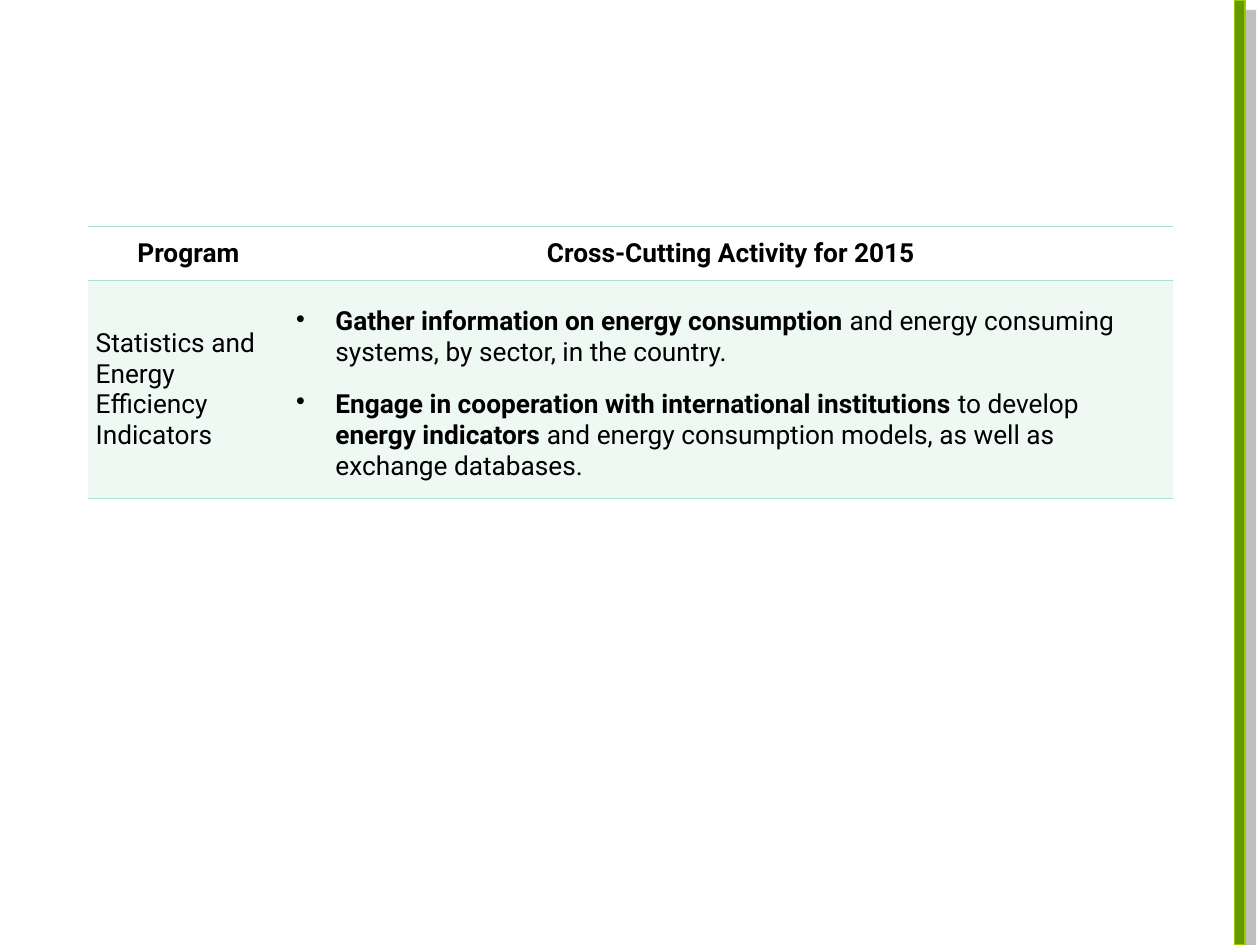
import pptx
import pptx.util
import pptx.dml.color
import pptx.enum.shapes
import pptx.enum.text
import pptx.oxml
import pptx.oxml.ns

Pt = pptx.util.Pt
ALIGN = pptx.enum.text.PP_ALIGN
COLORS = {"text": "000000", "mint": "AAE2CA", "green": "669900",
          "lime": "99CC00", "shade": "808080"}
NO_STYLE = "{2D5ABB26-0587-4C30-8999-92F81FD0307C}"


def color(name):
    return pptx.dml.color.RGBColor.from_string(COLORS[name])


def node(xml):
    """Parse one element whose root tag is in the drawing namespace."""
    tag, rest = xml[1:].split(":", 1)
    return pptx.oxml.parse_xml(f"<{tag}:{rest}".replace(
        ">", f" {pptx.oxml.ns.nsdecls('a')}>", 1))


class Deck:
    font = "Roboto"
    size = 15
    gap = 12
    indent = 22.5

    def __init__(self, wide, high):
        self.show = pptx.Presentation()
        self.show.slide_width, self.show.slide_height = Pt(wide), Pt(high)
        self.slide = self.show.slides.add_slide(self.show.slide_layouts[6])

    def bar(self, left, top, wide, high):
        shape = self.slide.shapes.add_shape(
            pptx.enum.shapes.MSO_SHAPE.RECTANGLE,
            Pt(left), Pt(top), Pt(wide), Pt(high))
        shape.fill.solid()
        shape.fill.fore_color.rgb = color("green")
        shape.line.color.rgb = color("lime")
        shape.line.width = Pt(0.75)
        shape.shadow.inherit = False
        shade = node(
            f'<a:outerShdw dist="{Pt(8.5)}" dir="2700000" algn="ctr" rotWithShape="0">'
            f'<a:srgbClr val="{COLORS["shade"]}"><a:alpha val="50000"/>'
            '</a:srgbClr></a:outerShdw>')
        shape._element.spPr.find(pptx.oxml.ns.qn("a:effectLst")).append(shade)

    def table(self, left, top, cols, rows):
        frame = self.slide.shapes.add_table(
            len(rows), len(cols), Pt(left), Pt(top), Pt(sum(cols)), Pt(sum(rows)))
        grid = frame.table
        grid.first_row = grid.horz_banding = False
        style = grid._tbl.tblPr.find(pptx.oxml.ns.qn("a:tableStyleId"))
        style.text = NO_STYLE
        for col, wide in zip(grid.columns, cols):
            col.width = Pt(wide)
        for row, high in zip(grid.rows, rows):
            row.height = Pt(high)
        return grid

    def cell(self, cell, paras, align=ALIGN.LEFT, tint=False, bullet=False, top=2.2):
        """Fill a cell; each paragraph is a list of (text, bold) runs."""
        cell.vertical_anchor = pptx.enum.text.MSO_ANCHOR.MIDDLE
        cell.margin_left = cell.margin_right = Pt(4.3)
        cell.margin_top, cell.margin_bottom = Pt(top), Pt(2.2)
        self.edges(cell, "B" if tint else "TB")
        if tint:
            cell.fill.solid()
            cell.fill.fore_color.rgb = color("mint")
            tone = cell._tc.tcPr.find(".//" + pptx.oxml.ns.qn("a:solidFill") + "[last()]")
            tone = cell._tc.tcPr[-1] if tone is not None else tone
            tone[0].append(node('<a:alpha val="20000"></a:alpha>'))
        else:
            cell.fill.background()
        for num, runs in enumerate(paras):
            frame = cell.text_frame
            para = frame.add_paragraph() if num else frame.paragraphs[0]
            self.para(para, runs, align, bullet)
            if num:
                para.space_before = Pt(self.gap)

    def edges(self, cell, sides):
        for side in sides:
            cell._tc.get_or_add_tcPr().append(node(
                f'<a:ln{side} w="{Pt(1)}"><a:solidFill>'
                f'<a:srgbClr val="{COLORS["mint"]}"/></a:solidFill></a:ln{side}>'))

    def para(self, para, runs, align, bullet):
        para.alignment = align
        if bullet:
            props = para._p.get_or_add_pPr()
            props.set("marL", str(Pt(self.indent)))
            props.set("indent", str(-Pt(self.indent)))
            props.append(node('<a:buChar char="•"></a:buChar>'))
        para.font.name = self.font
        para.font.size = Pt(self.size)
        para.font.color.rgb = color("text")
        for text, bold in runs:
            run = para.add_run()
            run.text = text
            run.font.bold = bold


def main():
    deck = Deck(720, 540)
    deck.bar(705.6, 0, 5.8, 540)
    grid = deck.table(50.4, 129.4, [114.5, 505.5], [30.9, 124.6])
    for col, text in enumerate(["Program", "Cross-Cutting Activity for 2015"]):
        deck.cell(grid.cell(0, col), [[(text, True)]], ALIGN.CENTER)
    deck.cell(grid.cell(1, 0),
              [[("Statistics and Energy Efficiency Indicators", False)]], tint=True)
    tasks = [
        [("Gather information on energy consumption ", True),
         ("and energy consuming systems, by sector, in the country.", False)],
        [("Engage in cooperation with international institutions ", True),
         ("to develop ", False),
         ("energy indicators ", True),
         ("and energy consumption models, as well as exchange databases.", False)],
    ]
    deck.cell(grid.cell(1, 1), tasks, tint=True, bullet=True, top=7.3)
    deck.show.save("out.pptx")


if __name__ == "__main__":
    main()
